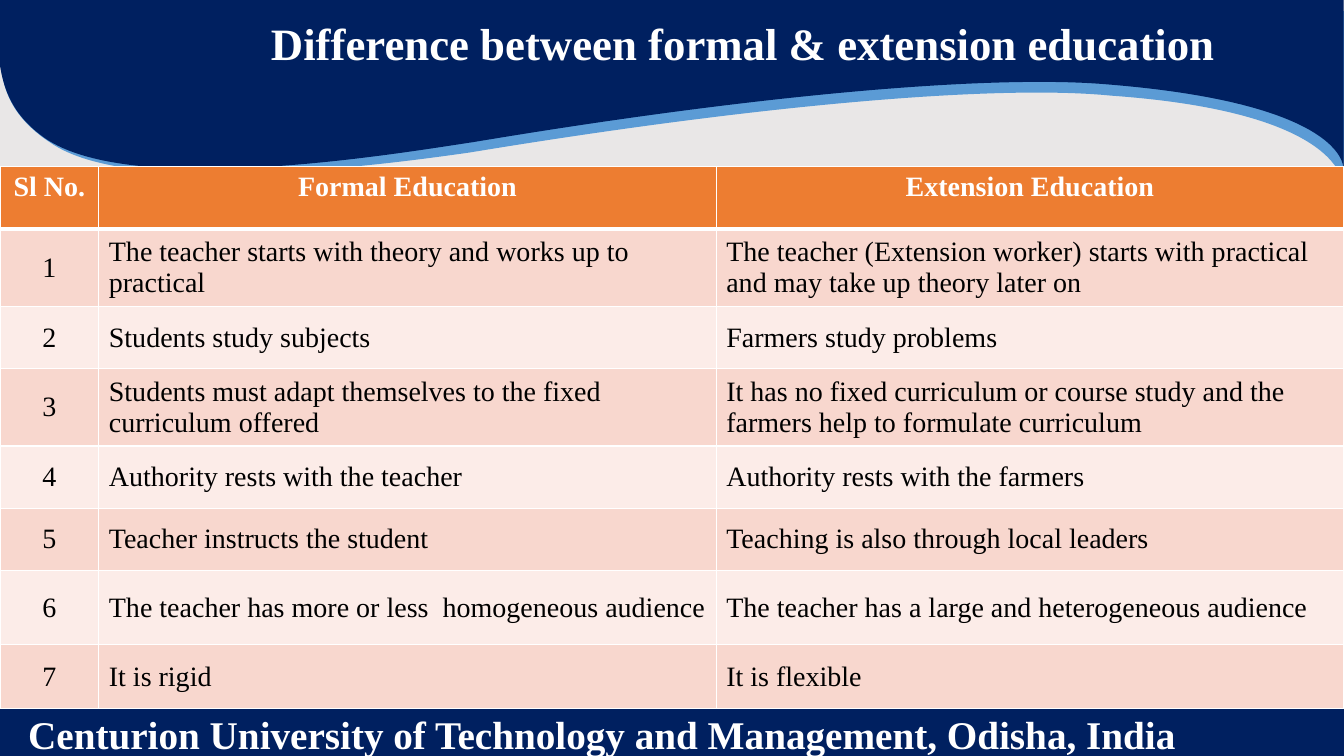
from dataclasses import dataclass

from lxml.etree import SubElement
from pptx import Presentation
from pptx.dml.color import RGBColor
from pptx.enum.shapes import MSO_SHAPE
from pptx.enum.text import MSO_ANCHOR, MSO_AUTO_SIZE, PP_ALIGN
from pptx.oxml.ns import qn
from pptx.shapes.autoshape import Shape
from pptx.slide import Slide
from pptx.table import _Cell
from pptx.text.text import TextFrame
from pptx.util import Cm, Pt

Point = tuple[float, float]
Curve = tuple[Point, Point, Point]


@dataclass(frozen=True)
class Theme:
    font: str = "Times New Roman"
    background: str = "E9E7E7"
    navy: str = "002060"
    sky: str = "5B9BD5"
    header: str = "ED7D31"
    bands: tuple[str, str] = ("F8D7CE", "FCECE8")
    white: str = "FFFFFF"
    black: str = "000000"
    title_size: int = 32
    footer_size: int = 28
    table_size: int = 20
    thin_border: int = 1
    thick_border: int = 3


@dataclass(frozen=True)
class Wave:
    color: str
    start: Point
    curves: tuple[Curve, ...]
    top_right: Point


@dataclass(frozen=True)
class Row:
    height: float
    formal: str
    extension: str


THEME = Theme()
SLIDE_WIDTH = 33.87
SLIDE_HEIGHT = 19.05
COLUMN_WIDTHS = (2.49, 15.56, 15.81)
SINGLE, LAST, TALL, DOUBLE = 1.57, 1.62, 1.86, 1.94

WAVES = (
    Wave(
        THEME.sky,
        (0, 0.25),
        (
            ((-0.03, 1.68), (-0.13, 2.72), (1.37, 3.66)),
            ((3.51, 5.0), (9.98, 4.11), (11.86, 3.84)),
            ((19.25, 2.62), (25.17, 2.13), (27.99, 2.41)),
            ((34.93, 2.9), (33.68, 5.31), (33.88, 4.67)),
        ),
        (33.88, 0.28),
    ),
    Wave(
        THEME.navy,
        (-0.08, 0),
        (
            ((-0.08, 1.65), (-0.03, 2.59), (1.02, 3.4)),
            ((3.12, 5.05), (10.06, 3.86), (11.94, 3.58)),
            ((19.35, 2.34), (25.12, 1.88), (27.94, 2.13)),
            ((34.82, 2.69), (33.73, 4.72), (33.86, 4.19)),
        ),
        (33.86, 0),
    ),
)

ROWS = (
    Row(
        DOUBLE,
        "The teacher starts with theory and works up to practical",
        "The teacher (Extension worker) starts with practical and may take up theory later on",
    ),
    Row(SINGLE, "Students study subjects", "Farmers study problems"),
    Row(
        DOUBLE,
        "Students must adapt themselves to the fixed curriculum offered",
        "It has no fixed curriculum or course study and the farmers help to formulate curriculum",
    ),
    Row(SINGLE, "Authority rests with the teacher", "Authority rests with the farmers"),
    Row(SINGLE, "Teacher instructs the student", "Teaching is also through local leaders"),
    Row(
        TALL,
        "The teacher has more or less  homogeneous audience",
        "The teacher has a large and heterogeneous audience",
    ),
    Row(LAST, "It is rigid", "It is flexible"),
)


def write_text(
    frame: TextFrame, text: str, size: int, color: str, bold: bool, alignment: PP_ALIGN
) -> None:
    frame.text = text
    frame.word_wrap = True
    paragraph = frame.paragraphs[0]
    paragraph.alignment = alignment
    paragraph.font.name = THEME.font
    paragraph.font.size = Pt(size)
    paragraph.font.bold = bold
    paragraph.font.color.rgb = RGBColor.from_string(color)


def paint(shape: Shape, color: str) -> None:
    shape.shadow.inherit = False
    shape.fill.solid()
    shape.fill.fore_color.rgb = RGBColor.from_string(color)
    shape.line.fill.background()


def bend_lines(shape: Shape, curves: tuple[Curve, ...]) -> None:
    lines = list(shape._element.iter(qn("a:lnTo")))
    for line, curve in zip(lines, curves):
        line.tag = qn("a:cubicBezTo")
        line.remove(line[0])
        for x, y in curve:
            SubElement(
                line, qn("a:pt"), x=str(Cm(x) - shape.left), y=str(Cm(y) - shape.top)
            )


def draw_wave(slide: Slide, wave: Wave) -> None:
    corners = [curve[-1] for curve in wave.curves] + [wave.top_right]
    builder = slide.shapes.build_freeform(Cm(wave.start[0]), Cm(wave.start[1]))
    builder.add_line_segments([(Cm(x), Cm(y)) for x, y in corners], close=True)
    shape = builder.convert_to_shape()
    bend_lines(shape, wave.curves)
    paint(shape, wave.color)


def draw_footer(slide: Slide) -> None:
    footer = slide.shapes.add_shape(
        MSO_SHAPE.RECTANGLE, Cm(-0.05), Cm(17.78), Cm(33.96), Cm(1.45)
    )
    paint(footer, THEME.navy)
    frame = footer.text_frame
    write_text(
        frame,
        "Centurion University of Technology and Management, Odisha, India",
        THEME.footer_size,
        THEME.white,
        True,
        PP_ALIGN.LEFT,
    )
    frame.margin_left = Cm(0.76)
    frame.vertical_anchor = MSO_ANCHOR.TOP
    frame.auto_size = MSO_AUTO_SIZE.SHAPE_TO_FIT_TEXT


def draw_title(slide: Slide) -> None:
    title = slide.shapes.add_textbox(Cm(6.58), Cm(0.27), Cm(27.03), Cm(1.62))
    text = "Difference between formal & extension education"
    write_text(title.text_frame, text, THEME.title_size, THEME.white, True, PP_ALIGN.LEFT)
    title.text_frame.auto_size = MSO_AUTO_SIZE.SHAPE_TO_FIT_TEXT


def style_cell(cell: _Cell, color: str, top: int, bottom: int) -> None:
    properties = cell._tc.get_or_add_tcPr()
    thin = THEME.thin_border
    for side, width in (("L", thin), ("R", thin), ("T", top), ("B", bottom)):
        border = SubElement(properties, qn(f"a:ln{side}"), w=str(Pt(width)))
        fill = SubElement(border, qn("a:solidFill"))
        SubElement(fill, qn("a:srgbClr"), val=THEME.white)
    cell.fill.solid()
    cell.fill.fore_color.rgb = RGBColor.from_string(color)


def draw_table(slide: Slide) -> None:
    rows = (Row(SINGLE, "Formal Education", "Extension Education"), *ROWS)
    height = sum(row.height for row in rows)
    table = slide.shapes.add_table(
        len(rows), len(COLUMN_WIDTHS), Cm(0), Cm(4.2), Cm(sum(COLUMN_WIDTHS)), Cm(height)
    ).table
    for column, width in zip(table.columns, COLUMN_WIDTHS):
        column.width = Cm(width)
    for number, row in enumerate(rows):
        table.rows[number].height = Cm(row.height)
        is_header = number == 0
        fill = THEME.header if is_header else THEME.bands[(number - 1) % 2]
        color = THEME.white if is_header else THEME.black
        top = THEME.thick_border if number == 1 else THEME.thin_border
        bottom = THEME.thick_border if is_header else THEME.thin_border
        label = "Sl No." if is_header else str(number)
        for column, text in enumerate((label, row.formal, row.extension)):
            cell = table.cell(number, column)
            alignment = PP_ALIGN.CENTER if is_header or column == 0 else PP_ALIGN.LEFT
            write_text(cell.text_frame, text, THEME.table_size, color, is_header, alignment)
            cell.vertical_anchor = MSO_ANCHOR.TOP if is_header else MSO_ANCHOR.MIDDLE
            style_cell(cell, fill, top, bottom)


def main() -> None:
    presentation = Presentation()
    presentation.slide_width = Cm(SLIDE_WIDTH)
    presentation.slide_height = Cm(SLIDE_HEIGHT)
    slide = presentation.slides.add_slide(presentation.slide_layouts[6])
    slide.background.fill.solid()
    slide.background.fill.fore_color.rgb = RGBColor.from_string(THEME.background)
    for wave in WAVES:
        draw_wave(slide, wave)
    draw_footer(slide)
    draw_table(slide)
    draw_title(slide)
    presentation.save("out.pptx")


if __name__ == "__main__":
    main()
